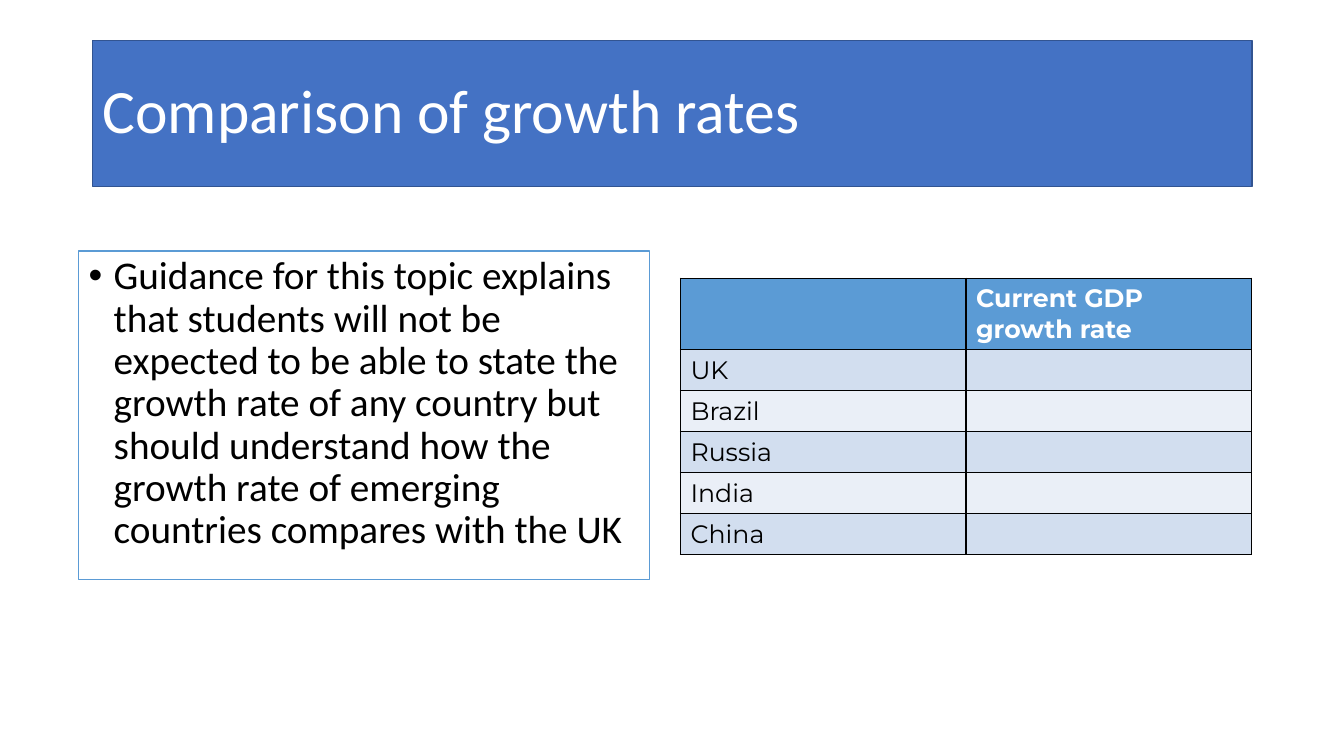
import pptx
import pptx.dml.color
import pptx.enum.shapes
import pptx.enum.text
import pptx.oxml
import pptx.oxml.ns
import pptx.util

THEME = {
    "banner": "4472C4", "banner_edge": "325491", "accent": "5B9BD5",
    "paper": "FFFFFF", "ink": "000000", "bands": ("D2DEEF", "EAEFF7"),
    "text_font": "Calibri", "table_font": "Montserrat",
    "title_size": 44, "guidance_size": 28, "table_size": 18, "line": 1,
}
COUNTRIES = ["UK", "Brazil", "Russia", "India", "China"]

deck = pptx.Presentation()
deck.slide_width = pptx.util.Inches(13.33)
deck.slide_height = pptx.util.Inches(7.5)
slide = deck.slides.add_slide(deck.slide_layouts[6])
across = deck.slide_width / 100
down = deck.slide_height / 100


def style(paragraph, font, size, color, bold=False):
    paragraph.font.name = font
    paragraph.font.size = pptx.util.Pt(size)
    paragraph.font.bold = bold
    paragraph.font.color.rgb = pptx.dml.color.RGBColor.from_string(color)


def add_panel(left, top, width, height, fill, edge, text, size, color, anchor):
    panel = slide.shapes.add_shape(
        pptx.enum.shapes.MSO_SHAPE.RECTANGLE,
        int(left * across), int(top * down), int(width * across), int(height * down))
    panel.shadow.inherit = False
    panel.fill.solid()
    panel.fill.fore_color.rgb = pptx.dml.color.RGBColor.from_string(fill)
    panel.line.color.rgb = pptx.dml.color.RGBColor.from_string(edge)
    panel.line.width = pptx.util.Pt(THEME["line"])
    panel.text_frame.word_wrap = True
    panel.text_frame.vertical_anchor = anchor
    paragraph = panel.text_frame.paragraphs[0]
    paragraph.text = text
    paragraph.alignment = pptx.enum.text.PP_ALIGN.LEFT
    paragraph.line_spacing = 0.9
    style(paragraph, THEME["text_font"], size, color)
    return paragraph


add_panel(6.9, 5.33, 86.25, 19.33, THEME["banner"], THEME["banner_edge"],
          "Comparison of growth rates", THEME["title_size"], THEME["paper"],
          pptx.enum.text.MSO_ANCHOR.MIDDLE)

guidance = add_panel(
    5.85, 33.2, 42.5, 43.47, THEME["paper"], THEME["accent"],
    "Guidance for this topic explains that students will not be expected to be able to "
    "state the growth rate of any country but should understand how the growth rate of "
    "emerging countries compares with the UK",
    THEME["guidance_size"], THEME["ink"], pptx.enum.text.MSO_ANCHOR.TOP)
guidance.space_before = pptx.util.Pt(10)
bullet_indent = pptx.util.Inches(0.25)
guidance_format = guidance._p.get_or_add_pPr()
guidance_format.set("marL", str(bullet_indent))
guidance_format.set("indent", str(-bullet_indent))
namespace = pptx.oxml.ns.nsdecls("a")
for bullet in ('a:buFont %s typeface="Arial"', 'a:buChar %s char="•"'):
    guidance_format.insert_element_before(
        pptx.oxml.parse_xml(f"<{bullet % namespace}/>"), "a:tabLst", "a:defRPr", "a:extLst")

header_height, row_height = 9.4, 5.42
growth_rows = [("", "Current GDP growth rate")] + [(country, "") for country in COUNTRIES]
growth_table = slide.shapes.add_table(
    len(growth_rows), 2, int(50.63 * across), int(36.8 * down), int(42.5 * across),
    int((header_height + row_height * len(COUNTRIES)) * down)).table

for row, entries in enumerate(growth_rows):
    heading = row == 0
    growth_table.rows[row].height = int((header_height if heading else row_height) * down)
    fill = THEME["accent"] if heading else THEME["bands"][(row - 1) % 2]
    color = THEME["paper"] if heading else THEME["ink"]
    for column, entry in enumerate(entries):
        cell = growth_table.cell(row, column)
        cell.text = entry
        style(cell.text_frame.paragraphs[0], THEME["table_font"], THEME["table_size"],
              color, heading)
        cell_format = cell._tc.get_or_add_tcPr()
        for side in ("lnL", "lnR", "lnT", "lnB"):
            cell_format.append(pptx.oxml.parse_xml(
                f'<a:{side} {namespace} w="{pptx.util.Pt(THEME["line"])}"><a:solidFill>'
                f'<a:srgbClr val="{THEME["ink"]}"/></a:solidFill></a:{side}>'))
        cell.fill.solid()
        cell.fill.fore_color.rgb = pptx.dml.color.RGBColor.from_string(fill)

deck.save("out.pptx")
